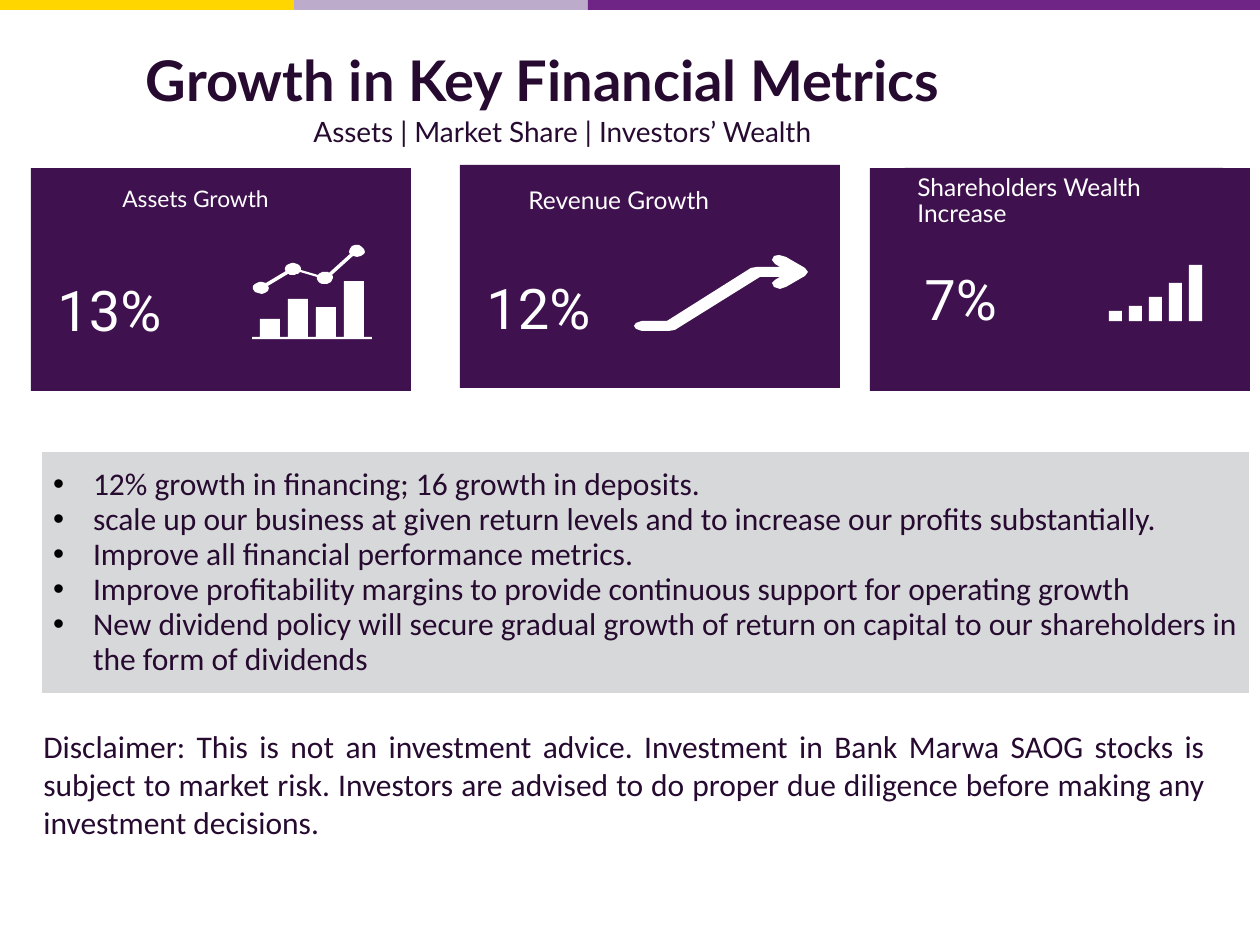
"""Build a slide of key financial growth metrics with three cards and a list."""
from math import atan2, cos, pi, sin
from lxml import etree
from pptx import Presentation
from pptx.dml.color import RGBColor
from pptx.enum.shapes import MSO_SHAPE
from pptx.enum.text import MSO_ANCHOR, MSO_AUTO_SIZE, PP_ALIGN
from pptx.oxml.ns import qn
from pptx.util import Pt

RECT = MSO_SHAPE.RECTANGLE
LEFT, MID, JUST = PP_ALIGN.LEFT, PP_ALIGN.CENTER, PP_ALIGN.JUSTIFY
TOP, CENTER = MSO_ANCHOR.TOP, MSO_ANCHOR.MIDDLE
FIXED = MSO_AUTO_SIZE.NONE
PX = 914400 / 126

HEX = {"gold": "FFD600", "lilac": "BDABCC", "purple": "6E2585", "card": "3F114F",
       "ink": "260A30", "grey": "D7D8D9", "white": "FFFFFF", "black": "000000"}

TITLE = "Growth in Key Financial Metrics"
SUB = "Assets | Market Share | Investors’ Wealth"
NOTE = ("Disclaimer: This is not an investment advice. Investment in Bank Marwa SAOG "
        "stocks is subject to market risk. Investors are advised to do proper due "
        "diligence before making any investment decisions.")
GOALS = [
    "12% growth in financing; 16 growth in deposits.",
    "scale up our business at given return levels and to increase our profits substantially.",
    "Improve all financial performance metrics.",
    "Improve profitability margins to provide continuous support for operating growth",
    "New dividend policy will secure gradual growth of return on capital to our "
    "shareholders in the form of dividends",
]
STRIPES = [("gold", 0, 294), ("lilac", 294, 588), ("purple", 588, 1260)]
CARDS = [
    {"at": (31, 168), "label": "Assets Growth", "size": 13, "head": (110, 179, 194, 39),
     "value": "13%", "body": (45, 269, 208, 81)},
    {"at": (460, 165), "label": "Revenue Growth", "size": 14, "head": (516, 181, 251, 39),
     "value": "12%", "body": (474, 267, 208, 81)},
    {"at": (870, 168), "label": "Shareholders Wealth Increase", "size": 14,
     "head": (905, 168, 318, 66), "value": "7%", "body": (912, 258, 147, 81)},
]
CARD_W, CARD_H = 380, 223
GROWTH = {"left": 260, "step": 28, "wide": 20, "base": 337, "tops": [319, 299, 307, 281]}
SIGNAL = {"left": 1109, "step": 20, "wide": 13, "base": 321, "tops": [311, 306, 297, 283, 265]}
DOTS = [(261, 288), (293, 269), (325, 278), (357, 251)]
DOT_W, DOT_H, GAP, STEPS = 8, 6, 0.25, 12
ARROW = [(642, 331), (636, 329), (634, 326), (636, 323), (642, 321), (667, 321),
         (751, 268), (757, 267), (780, 267), (775, 264), (772, 260), (774, 256),
         (779, 255), (786, 257), (805, 268), (808, 272), (805, 276), (786, 287),
         (780, 289), (774, 287), (772, 283), (775, 280), (780, 277), (760, 277),
         (675, 330), (669, 331)]


def px(n):
    return round(n * PX)


def color(name):
    return RGBColor.from_string(HEX[name])


def paint(shape, name):
    shape.shadow.inherit = False
    shape.fill.solid()
    shape.fill.fore_color.rgb = color(name)
    shape.line.fill.background()


def block(shapes, at, name):
    shape = shapes.add_shape(RECT, *map(px, at))
    paint(shape, name)
    return shape


def write(shape, lines, font, size, name, align=LEFT, anchor=TOP, bold=False,
          space=None, mark=False):
    frame = shape.text_frame
    frame.word_wrap = True
    frame.auto_size = FIXED
    frame.vertical_anchor = anchor
    frame.text = "\n".join(lines)
    for para in frame.paragraphs:
        para.alignment = align
        para.space_before = Pt(0)
        if space:
            para.line_spacing = space
        if mark:
            bullet(para)
        para.font.name = font
        para.font.size = Pt(size)
        para.font.bold = bold
        para.font.color.rgb = color(name)


def label(shapes, at, text, *style, **more):
    write(shapes.add_textbox(*map(px, at)), [text], *style, **more)


def place(shape, at):
    shape.left, shape.top, shape.width, shape.height = map(px, at)


def bullet(para):
    props = para._p.get_or_add_pPr()
    props.set("marL", str(px(40)))
    props.set("indent", str(px(-40)))
    tint = etree.SubElement(props, qn("a:buClr"))
    etree.SubElement(tint, qn("a:srgbClr"), val=HEX["black"])
    etree.SubElement(props, qn("a:buFont"), typeface="Arial")
    etree.SubElement(props, qn("a:buChar"), char="•")


def outline(shapes, loops):
    pen = shapes.build_freeform(*loops[0][0], scale=PX)
    for i, loop in enumerate(loops):
        if i:
            pen.move_to(*loop[0])
        pen.add_line_segments(loop[1:], close=True)
    paint(pen.convert_to_shape(), "white")


def box(x, y, right, base):
    return [(x, y), (right, y), (right, base), (x, base)]


def bars(left, step, wide, base, tops):
    return [box(left + i * step, top, left + i * step + wide, base)
            for i, top in enumerate(tops)]


def aim(dot, goal):
    return atan2((goal[1] - dot[1]) / DOT_H, (goal[0] - dot[0]) / DOT_W)


def trend():
    tour = DOTS + DOTS[-2:0:-1]
    points = []
    for i, dot in enumerate(tour):
        start = aim(dot, tour[i - 1])
        sweep = (aim(dot, tour[(i + 1) % len(tour)]) - start) % (2 * pi) or 2 * pi
        for k in range(STEPS + 1):
            turn = start + GAP + (sweep - 2 * GAP) * k / STEPS
            points.append((dot[0] + DOT_W * cos(turn), dot[1] + DOT_H * sin(turn)))
    return points


def main():
    deck = Presentation()
    deck.slide_width, deck.slide_height = px(1260), px(945)
    slide = deck.slides.add_slide(deck.slide_layouts[1])
    shapes = slide.shapes

    for name, x, end in STRIPES:
        block(shapes, (x, 0, end - x, 10), name)

    place(shapes.title, (102, 39, 882, 81))
    write(shapes.title, [TITLE], "Lato", 32, "ink", MID, CENTER, bold=True)
    label(shapes, (17, 108, 1091, 37), SUB, "Lato", 16, "ink", MID)

    for card in CARDS:
        block(shapes, (*card["at"], CARD_W, CARD_H), "card")
        write(block(shapes, card["head"], "card"), [card["label"]],
              "Lato", card["size"], "white", space=Pt(15.3))
        write(block(shapes, card["body"], "card"), [card["value"]], "Roboto", 32, "white")

    outline(shapes, bars(**GROWTH) + [box(252, 337, 372, 339)])
    outline(shapes, [trend()])
    outline(shapes, [ARROW])
    outline(shapes, bars(**SIGNAL))

    goals = slide.placeholders[1]
    place(goals, (42, 452, 1207, 241))
    goals.fill.solid()
    goals.fill.fore_color.rgb = color("grey")
    goals.text_frame.margin_left = goals.text_frame.margin_right = px(11)
    write(goals, GOALS, "Calibri", 18, "ink", JUST, CENTER, space=0.93, mark=True)

    label(shapes, (31, 721, 1187, 127), NOTE, "Calibri", 18, "ink", JUST)
    deck.save("out.pptx")


if __name__ == "__main__":
    main()
